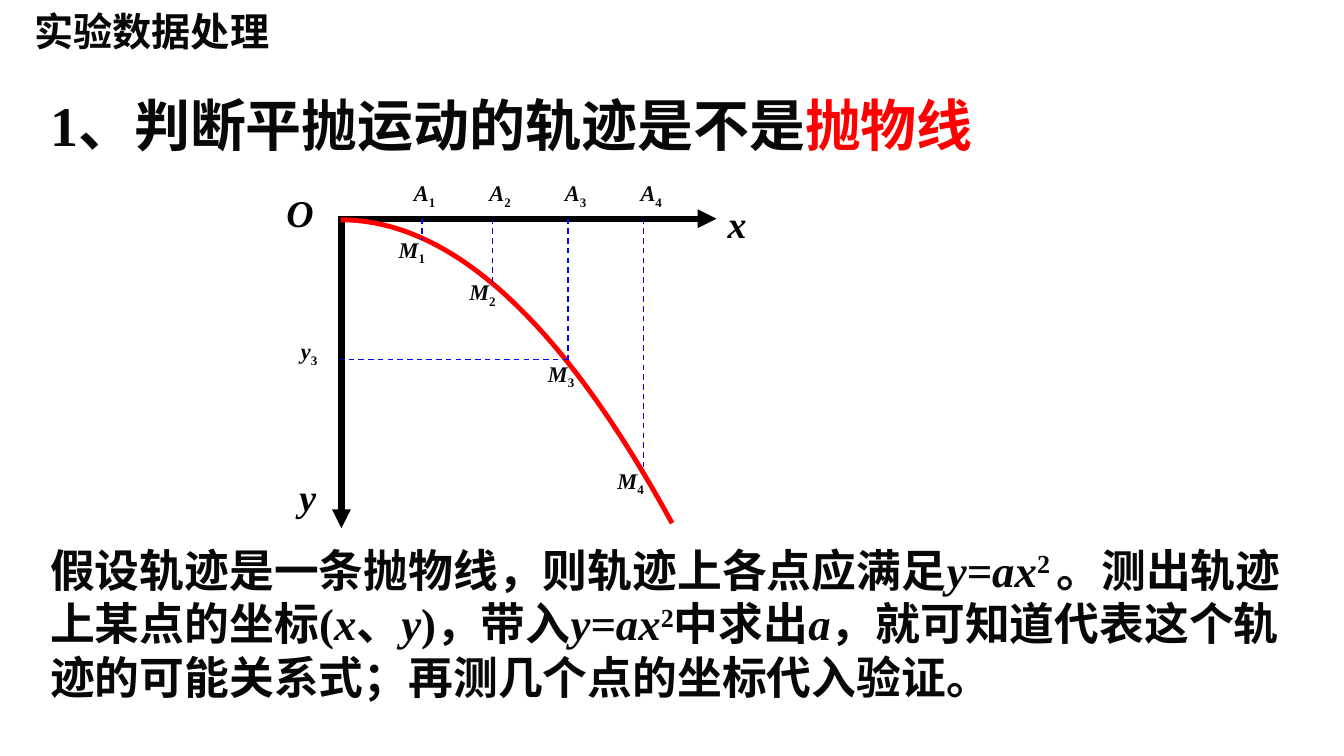
from lxml import etree
from pptx import Presentation
from pptx.dml.color import RGBColor
from pptx.enum.dml import MSO_LINE
from pptx.enum.lang import MSO_LANGUAGE_ID
from pptx.enum.shapes import MSO_CONNECTOR
from pptx.enum.text import MSO_ANCHOR, MSO_AUTO_SIZE, PP_ALIGN
from pptx.oxml.ns import qn
from pptx.util import Pt

BLACK = RGBColor(0, 0, 0)
INK = RGBColor(0x08, 0x08, 0x08)
RED = RGBColor(0xFF, 0, 0)
BLUE = RGBColor(0, 0, 0xFF)
SERIF = "Times New Roman"
SANS = "Arial"
CHINESE = MSO_LANGUAGE_ID.SIMPLIFIED_CHINESE
STRAIGHT = MSO_CONNECTOR.STRAIGHT
DASH = MSO_LINE.DASH
NO_FIT = MSO_AUTO_SIZE.NONE
TOP, MIDDLE = MSO_ANCHOR.TOP, MSO_ANCHOR.MIDDLE
LEFT, JUSTIFY = PP_ALIGN.LEFT, PP_ALIGN.JUSTIFY

AXIS_X, AXIS_Y = 244, 156.2
DROPS = [(301.7, 171.4), (352, 203), (406, 257), (460, 335.5)]
M_LABELS = [(277.9, 164.9), (328.3, 195.1), (384.5, 253.4), (434.2, 329.8)]


def add_run(p, text, size, color=INK, font=SERIF, italic=False, baseline=0):
    """Append one bold run; baseline is a percentage shift."""
    r = p.add_run()
    r.text = text
    r.font.name, r.font.size = font, Pt(size)
    r.font.bold, r.font.italic = True, italic
    r.font.color.rgb = color
    r.font.language_id = CHINESE
    if baseline:
        r._r.get_or_add_rPr().set("baseline", str(baseline * 1000))


def setup_frame(tf, inset_x=7.2, inset_y=3.6, anchor=TOP, align=LEFT):
    """Set wrapping, insets and alignment, and return the first paragraph."""
    tf.word_wrap = True
    tf.auto_size = NO_FIT
    tf.margin_left = tf.margin_right = Pt(inset_x)
    tf.margin_top = tf.margin_bottom = Pt(inset_y)
    tf.vertical_anchor = anchor
    p = tf.paragraphs[0]
    p.alignment = align
    return p


def add_box(s, x, y, w, h, **frame):
    """Add a text box and return its first paragraph."""
    sp = s.shapes.add_textbox(Pt(x), Pt(y), Pt(w), Pt(h))
    return setup_frame(sp.text_frame, **frame)


def add_point_label(s, letter, index, x, y):
    """Add an italic letter with a subscript number."""
    p = add_box(s, x, y, 36, 36, align=JUSTIFY)
    add_run(p, letter, 16, italic=True)
    add_run(p, str(index), 16, baseline=-25)


def add_axis_label(s, letter, x, y, w):
    """Add a large italic axis letter."""
    p = add_box(s, x, y, w, 40, inset_x=6, inset_y=3, align=JUSTIFY)
    add_run(p, letter, 27, BLACK, italic=True)


def add_line(s, x1, y1, x2, y2, color, width):
    """Add a straight line without a shadow."""
    line = s.shapes.add_connector(STRAIGHT, Pt(x1), Pt(y1), Pt(x2), Pt(y2))
    line.line.color.rgb = color
    line.line.width = Pt(width)
    etree.SubElement(line._element.spPr, qn("a:effectLst"))
    return line


def add_axis(s, x1, y1, x2, y2):
    """Add a thick black line with an arrowhead."""
    axis = add_line(s, x1, y1, x2, y2, BLACK, 4.5)
    etree.SubElement(axis.line._get_or_add_ln(), qn("a:tailEnd"), type="triangle")


def add_guide(s, x1, y1, x2, y2):
    """Add a thin dashed blue line."""
    add_line(s, x1, y1, x2, y2, BLUE, 1).line.dash_style = DASH


def add_parabola(s, x, y, w, h, steps=48):
    """Draw a parabola opening downwards from its vertex at x, y."""
    points = [(Pt(x + w * i / steps), Pt(y + h * (i / steps) ** 2))
              for i in range(steps + 1)]
    builder = s.shapes.build_freeform(*points[0])
    builder.add_line_segments(points[1:], close=False)
    sp = builder.convert_to_shape()
    sp.shadow.inherit = False
    sp.fill.background()
    sp.line.color.rgb = RED
    sp.line.width = Pt(3.5)


def add_title(s):
    """Place and fill the title placeholder."""
    sp = s.shapes.title
    sp.left, sp.top, sp.width, sp.height = Pt(16), Pt(0.7), Pt(528), Pt(42.5)
    p = setup_frame(sp.text_frame, 8.64, 4.32)
    add_run(p, "实验数据处理", 28, font=SANS)


def add_diagram(s):
    """Draw the axes, trajectory, guide lines and labels."""
    add_axis(s, AXIS_X, 154, AXIS_X, 377.3)
    add_axis(s, 242, AXIS_Y, 512, AXIS_Y)
    add_parabola(s, 243.4, 157, 236.9, 216.7)
    for letter, x, y, w in [("O", 198.7, 132.5, 36), ("y", 208, 335.5, 26),
                            ("x", 514, 140.4, 26)]:
        add_axis_label(s, letter, x, y, w)
    for i, (drop, label) in enumerate(zip(DROPS, M_LABELS)):
        add_guide(s, drop[0], AXIS_Y, *drop)
        add_point_label(s, "A", i + 1, 288.7 + 54 * i, 124.6)
        add_point_label(s, "M", i + 1, *label)
    add_guide(s, *DROPS[2], AXIS_X, DROPS[2][1])
    add_point_label(s, "y", 3, 208, 237.6)


def add_explanation(s):
    """Add the heading above and the paragraph below the diagram."""
    p = add_box(s, 28.8, 61.2, 862.5, 55.4, anchor=MIDDLE)
    add_run(p, "1、判断平抛运动的轨迹是不是", 40)
    add_run(p, "抛物线", 40, RED)
    p = add_box(s, 28.8, 383.8, 905, 123.8)
    for text, italic, baseline in [
        ("假设轨迹是一条抛物线，则轨迹上各点应满足", False, 0),
        ("y=ax", True, 0),
        ("2 ", False, 30),
        ("。测出轨迹上某点的坐标(", False, 0),
        ("x", True, 0),
        ("、", False, 0),
        ("y", True, 0),
        (")，带入", False, 0),
        ("y=ax", True, 0),
        ("2", False, 30),
        ("中求出", False, 0),
        ("a", True, 0),
        ("，就可知道代表这个轨迹的可能关系式；再测几个点的坐标代入验证。", False, 0),
    ]:
        add_run(p, text, 32, italic=italic, baseline=baseline)


def main():
    """Build the slide and save it."""
    prs = Presentation()
    prs.slide_width, prs.slide_height = Pt(960.48), Pt(540)
    s = prs.slides.add_slide(prs.slide_layouts[5])
    add_title(s)
    add_diagram(s)
    add_explanation(s)
    prs.save("out.pptx")


if __name__ == "__main__":
    main()
